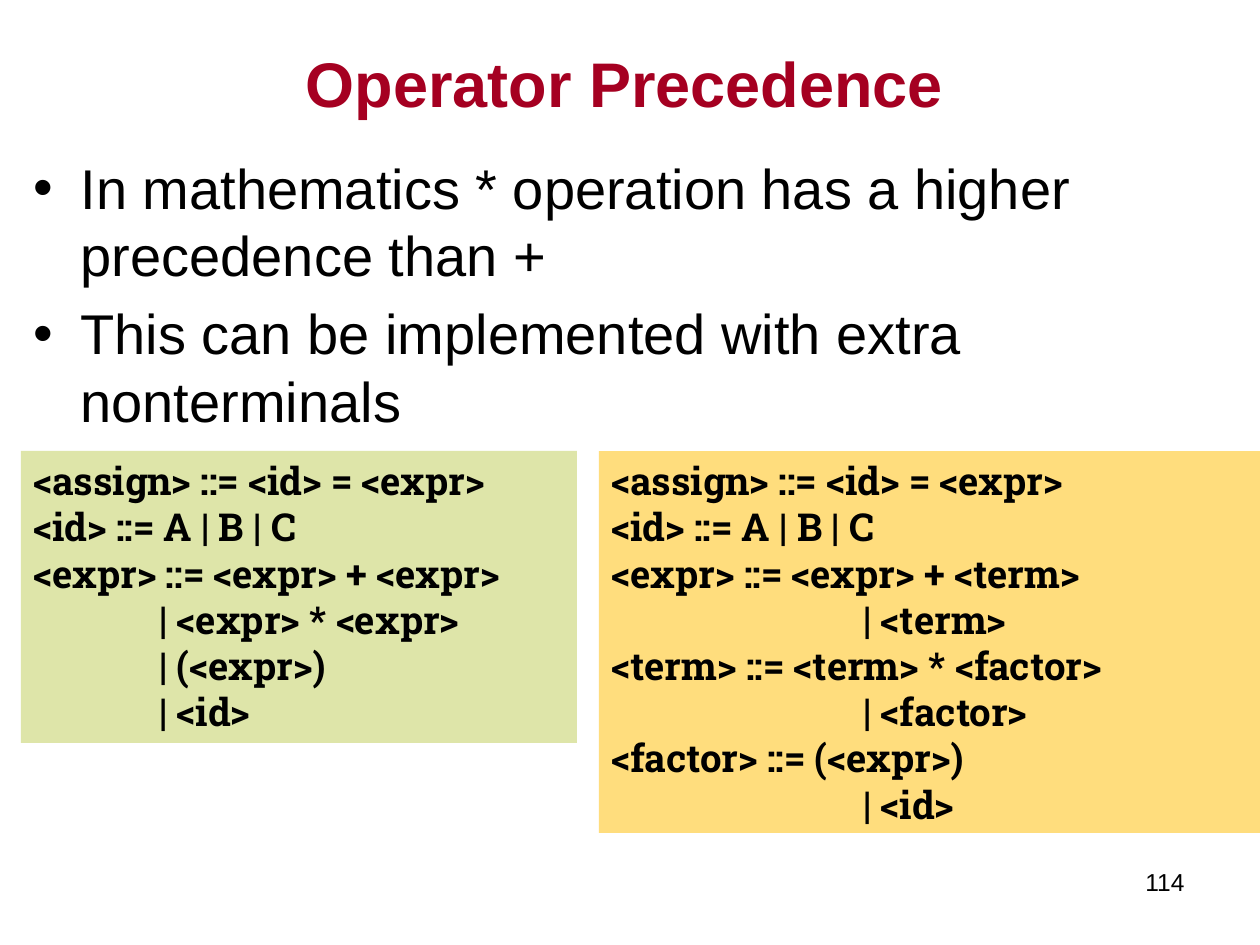
from dataclasses import dataclass

import pptx
import pptx.dml.color
import pptx.enum.shapes
import pptx.enum.text
import pptx.oxml
import pptx.oxml.ns
import pptx.util

PX = 914400 / 126
TAB = 126
LEFT, FULL_WIDTH = 21, 1207
GRAMMAR_TOP = 451
COLORS = {"title": "A50021", "text": "000000", "ambiguous": "DEE5A9", "layered": "FFDD7D"}
ALIGN = pptx.enum.text.PP_ALIGN
ANCHOR = pptx.enum.text.MSO_ANCHOR


@dataclass
class Rule:
    text: str
    tabs: int = 0


@dataclass
class Grammar:
    left: int
    width: int
    height: int
    fill: str
    rules: list[Rule]


GRAMMARS = [
    Grammar(599, 661, 382, "layered", [
        Rule("<assign> ::= <id> = <expr>"),
        Rule("<id> ::= A | B | C"),
        Rule("<expr> ::= <expr> + <term>"),
        Rule("| <term>", 2),
        Rule("<term> ::= <term> * <factor>"),
        Rule("| <factor>", 2),
        Rule("<factor> ::= (<expr>)"),
        Rule("| <id>", 2),
    ]),
    Grammar(LEFT, 556, 292, "ambiguous", [
        Rule("<assign> ::= <id> = <expr>"),
        Rule("<id> ::= A | B | C"),
        Rule("<expr> ::= <expr> + <expr>"),
        Rule("| <expr> * <expr>", 1),
        Rule("| (<expr>)", 1),
        Rule("| <id>", 1),
    ]),
]
POINTS = [
    "In mathematics * operation has a higher precedence than +",
    "This can be implemented with extra nonterminals",
]


def emu(px: int) -> int:
    return round(px * PX)


def rgb(name: str) -> pptx.dml.color.RGBColor:
    return pptx.dml.color.RGBColor.from_string(COLORS[name])


def place(shape, left: int, top: int, width: int, height: int) -> None:
    shape.left, shape.top = emu(left), emu(top)
    shape.width, shape.height = emu(width), emu(height)


def prepare_frame(frame, anchor) -> None:
    frame.word_wrap = True
    frame.auto_size = pptx.enum.text.MSO_AUTO_SIZE.NONE
    frame.vertical_anchor = anchor


def write(paragraph, text: str, size: int, font: str = "Arial", color: str = "text",
          bold: bool = False, align=ALIGN.LEFT) -> None:
    paragraph.text = text
    paragraph.alignment = align
    for run in paragraph.runs:
        run.font.size = pptx.util.Pt(size)
        run.font.name = font
        run.font.bold = bold
        run.font.color.rgb = rgb(color)


def paragraphs_for(frame, items: list):
    """Pair each item with a paragraph of its own, adding paragraphs as needed."""
    for index, item in enumerate(items):
        yield (frame.add_paragraph() if index else frame.paragraphs[0]), item


def set_indent(paragraph, margin: int, first_line: int = 0) -> None:
    properties = paragraph._p.get_or_add_pPr()
    properties.set("marL", str(emu(margin)))
    properties.set("indent", str(emu(first_line)))


def add_bullet(paragraph) -> None:
    bullet = pptx.oxml.parse_xml(f'<a:buChar {pptx.oxml.ns.nsdecls("a")} char="•"/>')
    paragraph._p.get_or_add_pPr().append(bullet)


def draw_grammar(slide, grammar: Grammar) -> None:
    box = slide.shapes.add_shape(
        pptx.enum.shapes.MSO_SHAPE.RECTANGLE,
        emu(grammar.left), emu(GRAMMAR_TOP), emu(grammar.width), emu(grammar.height))
    box.shadow.inherit = False
    box.fill.solid()
    box.fill.fore_color.rgb = rgb(grammar.fill)
    box.line.fill.background()
    prepare_frame(box.text_frame, ANCHOR.TOP)
    for paragraph, rule in paragraphs_for(box.text_frame, grammar.rules):
        write(paragraph, rule.text, 22, "Roboto Slab", bold=True)
        set_indent(paragraph, rule.tabs * TAB)


def main() -> None:
    deck = pptx.Presentation()
    deck.slide_width, deck.slide_height = emu(1260), emu(945)
    slide = deck.slides.add_slide(deck.slide_layouts[1])

    title, points = slide.placeholders
    place(title, LEFT, 38, FULL_WIDTH, 88)
    prepare_frame(title.text_frame, ANCHOR.MIDDLE)
    write(title.text_frame.paragraphs[0], "Operator Precedence", 36,
          color="title", bold=True, align=ALIGN.CENTER)

    place(points, LEFT, 147, FULL_WIDTH, 659)
    prepare_frame(points.text_frame, ANCHOR.TOP)
    for paragraph, point in paragraphs_for(points.text_frame, POINTS):
        write(paragraph, point, 32)
        paragraph.space_before = pptx.util.Pt(6.4)
        set_indent(paragraph, 47, -47)
        add_bullet(paragraph)

    for grammar in GRAMMARS:
        draw_grammar(slide, grammar)

    page_number = slide.shapes.add_textbox(emu(903), emu(861), emu(294), emu(65))
    prepare_frame(page_number.text_frame, ANCHOR.TOP)
    write(page_number.text_frame.paragraphs[0], "114", 14, align=ALIGN.RIGHT)

    deck.save("out.pptx")


if __name__ == "__main__":
    main()
